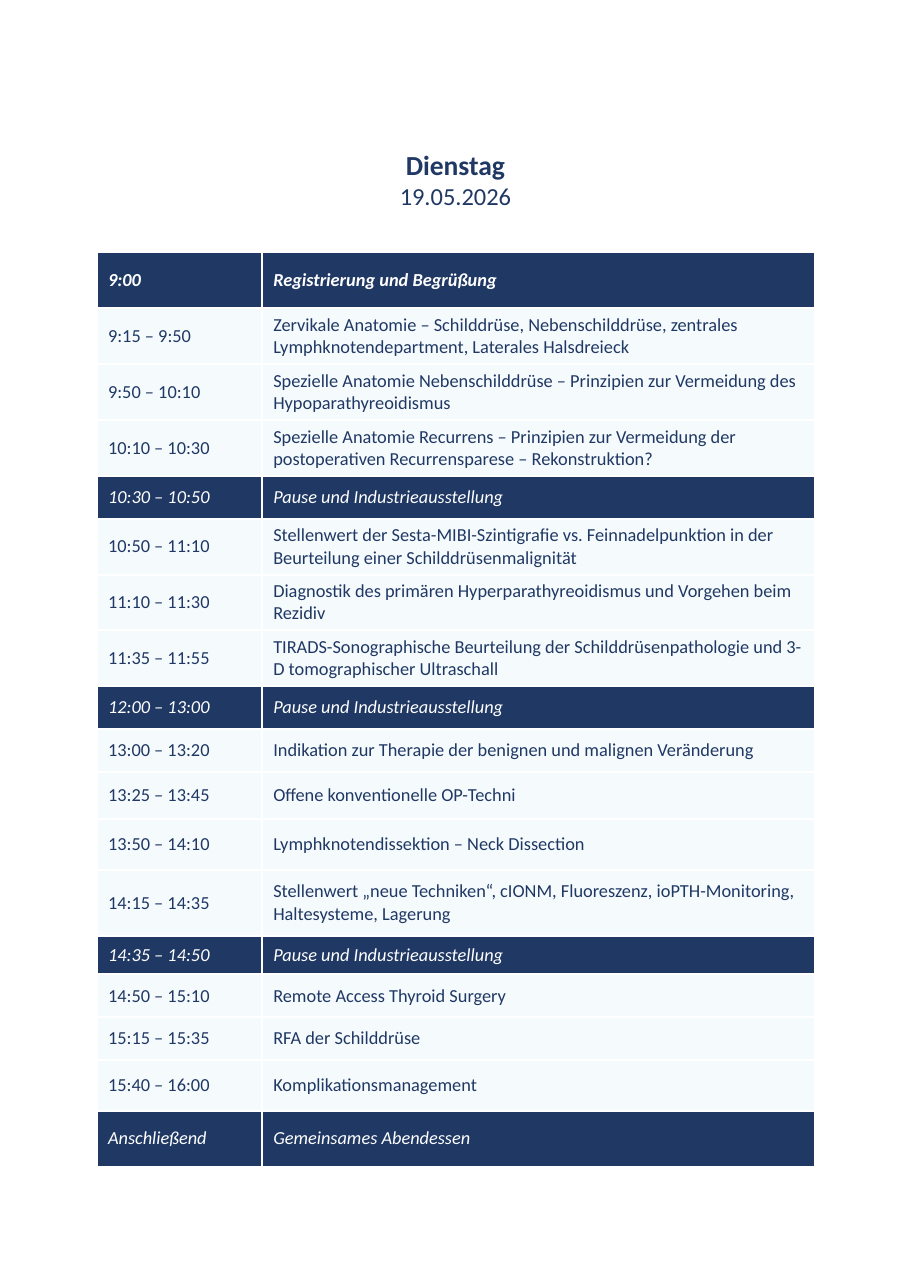
from lxml.etree import SubElement
from pptx import Presentation
from pptx.dml.color import RGBColor
from pptx.enum.text import MSO_ANCHOR, MSO_AUTO_SIZE, PP_ALIGN
from pptx.oxml.ns import qn
from pptx.util import Pt

NAVY, PALE, WHITE = "203864", "F5FAFD", "FFFFFF"

# Programme: time, topic, row height in points
HEADING = "9:00"
BREAKS = {"10:30 – 10:50", "12:00 – 13:00", "14:35 – 14:50", "Anschließend"}
PROGRAMME = [
    ("9:00", "Registrierung und Begrüßung", 36.7),
    ("9:15 – 9:50", "Zervikale Anatomie – Schilddrüse, Nebenschilddrüse, zentrales "
     "Lymphknotendepartment, Laterales Halsdreieck", 36),
    ("9:50 – 10:10", "Spezielle Anatomie Nebenschilddrüse – Prinzipien zur Vermeidung des "
     "Hypoparathyreoidismus", 36),
    ("10:10 – 10:30", "Spezielle Anatomie Recurrens – Prinzipien zur Vermeidung der "
     "postoperativen Recurrensparese – Rekonstruktion?", 36),
    ("10:30 – 10:50", "Pause und Industrieausstellung", 28),
    ("10:50 – 11:10", "Stellenwert der Sesta-MIBI-Szintigrafie vs. Feinnadelpunktion in der "
     "Beurteilung einer Schilddrüsenmalignität", 36),
    ("11:10 – 11:30", "Diagnostik des primären Hyperparathyreoidismus und Vorgehen beim "
     "Rezidiv", 36),
    ("11:35 – 11:55", "TIRADS-Sonographische Beurteilung der Schilddrüsenpathologie und "
     "3-D tomographischer Ultraschall", 36),
    ("12:00 – 13:00", "Pause und Industrieausstellung", 28),
    ("13:00 – 13:20", "Indikation zur Therapie der benignen und malignen Veränderung", 28),
    ("13:25 – 13:45", "Offene konventionelle OP-Techni", 31),
    ("13:50 – 14:10", "Lymphknotendissektion – Neck Dissection", 33),
    ("14:15 – 14:35", "Stellenwert „neue Techniken“, cIONM, Fluoreszenz, ioPTH-Monitoring, "
     "Haltesysteme, Lagerung", 43.2),
    ("14:35 – 14:50", "Pause und Industrieausstellung", 25.2),
    ("14:50 – 15:10", "Remote Access Thyroid Surgery", 28),
    ("15:15 – 15:35", "RFA der Schilddrüse", 28),
    ("15:40 – 16:00", "Komplikationsmanagement", 33),
    ("Anschließend", "Gemeinsames Abendessen", 36.7),
]


def rgb(value):
    return RGBColor.from_string(value)


class Page:
    """Holds the text style and the current slide."""

    font = "Calibri"
    size = 12
    border = 1.5

    def __init__(self, prs):
        self.slide = prs.slides.add_slide(prs.slide_layouts[5])

    def style(self, p, size, color, bold=False, italic=False):
        for r in p.runs:
            f = r.font
            f.name, f.size, f.bold, f.italic = self.font, Pt(size), bold, italic
            f.color.rgb = rgb(color)

    def title(self, left, top, width, height, lines):
        sp = self.slide.shapes.title
        sp.left, sp.top, sp.width, sp.height = map(Pt, (left, top, width, height))
        tf = sp.text_frame
        tf.text = "\n".join(text for text, size, bold in lines)
        tf.auto_size = MSO_AUTO_SIZE.NONE
        tf.vertical_anchor = MSO_ANCHOR.TOP
        for p, (text, size, bold) in zip(tf.paragraphs, lines):
            p.alignment = PP_ALIGN.CENTER
            self.style(p, size, NAVY, bold)

    def cell(self, cell, text, fill, color, bold, italic):
        tcPr = cell._tc.get_or_add_tcPr()
        for side in ("lnL", "lnR", "lnT", "lnB"):
            ln = SubElement(tcPr, qn(f"a:{side}"), w=str(Pt(self.border)))
            line_fill = SubElement(ln, qn("a:solidFill"))
            SubElement(line_fill, qn("a:srgbClr"), val=WHITE)
        cell.fill.solid()
        cell.fill.fore_color.rgb = rgb(fill)
        cell.vertical_anchor = MSO_ANCHOR.MIDDLE
        cell.text_frame.text = text
        self.style(cell.text_frame.paragraphs[0], self.size, color, bold, italic)

    def timetable(self, left, top, widths, rows):
        height = sum(row[2] for row in rows)
        table = self.slide.shapes.add_table(
            len(rows), len(widths), Pt(left), Pt(top), Pt(sum(widths)), Pt(height)).table
        table.first_row = table.horz_banding = False
        for column, width in zip(table.columns, widths):
            column.width = Pt(width)
        for row, (time, topic, row_height) in zip(table.rows, rows):
            row.height = Pt(row_height)
            heading = time == HEADING
            dark = heading or time in BREAKS
            fill, color = (NAVY, WHITE) if dark else (PALE, NAVY)
            for cell, text in zip(row.cells, (time, topic)):
                self.cell(cell, text, fill, color, heading, dark)


def main():
    prs = Presentation()
    prs.slide_width, prs.slide_height = Pt(595.44), Pt(841.68)
    page = Page(prs)

    # Day and date
    page.title(64.8, 92.9, 465.8, 48.2, [("Dienstag", 18, True), ("19.05.2026", 16, False)])

    # Timetable
    page.timetable(63.4, 164.9, (108, 361), PROGRAMME)

    prs.save("out.pptx")


if __name__ == "__main__":
    main()
